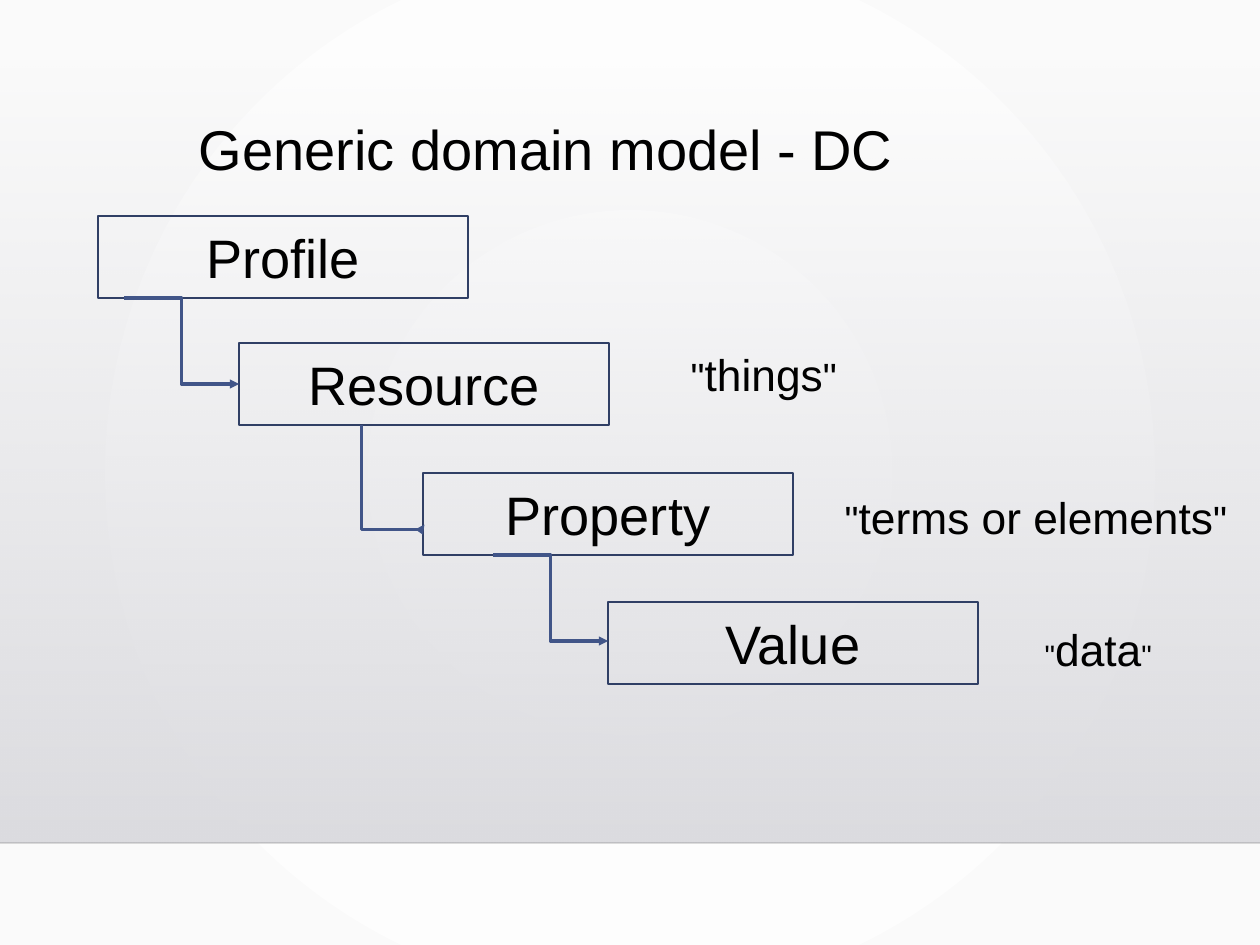
import dataclasses
import typing

import lxml.etree
import pptx
import pptx.dml.color
import pptx.enum.shapes
import pptx.enum.text
import pptx.oxml.ns
import pptx.util

PX = 10320
WIDTH, HEIGHT = 1260, 945
BOX_WIDTH, BOX_HEIGHT = 370, 82
FONT = "Arial"
BLACK, BOX_EDGE, ARROW = "000000", "303F65", "415588"
qn = pptx.oxml.ns.qn


@dataclasses.dataclass(frozen=True)
class Level:
    name: str
    left: int
    top: int


@dataclasses.dataclass(frozen=True)
class Link:
    begin: tuple[int, int]
    end: tuple[int, int]
    bend: int = 50000
    rotation: int = 0


@dataclasses.dataclass(frozen=True)
class Example:
    words: str
    left: int
    top: int
    width: int
    quote_size: int


LEVELS = [
    Level("Profile", 98, 216),
    Level("Resource", 239, 343),
    Level("Property", 423, 473),
    Level("Value", 608, 602),
]
LINKS = [
    Link((124, 298), (239, 384)),
    Link((443, 443), (343, 506), bend=105400, rotation=270),
    Link((493, 555), (608, 641)),
]
EXAMPLES = [
    Example("things", 682, 343, 166, 32),
    Example("terms or elements", 836, 486, 404, 32),
    Example("data", 1036, 618, 126, 24),
]


def px(*lengths: int) -> list[pptx.util.Emu]:
    return [pptx.util.Emu(length * PX) for length in lengths]


def colour(value: str) -> pptx.dml.color.RGBColor:
    return pptx.dml.color.RGBColor.from_string(value)


def format_run(run: typing.Any, size: float) -> None:
    run.font.size = pptx.util.Pt(size)
    run.font.name = FONT
    run.font.color.rgb = colour(BLACK)


def set_alpha(element: typing.Any, percent: int) -> None:
    tint = next(element.iter(qn("a:srgbClr")))
    lxml.etree.SubElement(tint, qn("a:alpha")).set("val", str(percent * 1000))


def set_gradient(fill: typing.Any, first: str, last: str) -> None:
    fill.gradient()
    for stop, value, position in zip(fill.gradient_stops, (first, last), (0, 1)):
        stop.color.rgb = colour(value)
        stop.position = position


def paint_background(slide: typing.Any) -> None:
    set_gradient(slide.background.fill, "FFFFFF", "FAFAFA")
    linear = next(slide.element.iter(qn("a:lin")))
    radial = lxml.etree.Element(qn("a:path"), {"path": "circle"})
    centre = dict.fromkeys("ltrb", "50000")
    lxml.etree.SubElement(radial, qn("a:fillToRect"), centre)
    linear.getparent().replace(linear, radial)


def add_line(slide: typing.Any, kind: typing.Any, begin: tuple[int, int],
             end: tuple[int, int], value: str, weight: float) -> typing.Any:
    line = slide.shapes.add_connector(kind, *px(*begin, *end))
    line.line.color.rgb = colour(value)
    line.line.width = pptx.util.Pt(weight)
    lxml.etree.SubElement(line.element.spPr, qn("a:effectLst"))
    return line


def add_backdrop(slide: typing.Any) -> None:
    shade = slide.shapes.add_shape(
        pptx.enum.shapes.MSO_SHAPE.RECTANGLE, *px(0, 65, WIDTH, 778))
    shade.shadow.inherit = False
    shade.line.fill.background()
    set_gradient(shade.fill, "DCDCE0", "DEDEE2")
    shade.fill.gradient_angle = 270
    set_alpha(shade.element, 0)
    floor = add_line(slide, pptx.enum.shapes.MSO_CONNECTOR.STRAIGHT,
                     (0, 843), (WIDTH, 843), "000001", 1)
    set_alpha(floor.element, 20)


def place_title(slide: typing.Any) -> None:
    title = slide.shapes.title
    title.left, title.top, title.width, title.height = px(190, 115, 905, 75)
    slide.shapes.element.append(title.element)
    frame = title.text_frame
    frame.text = "Generic domain model - DC"
    frame.auto_size = pptx.enum.text.MSO_AUTO_SIZE.NONE
    frame.vertical_anchor = pptx.enum.text.MSO_ANCHOR.MIDDLE
    heading = frame.paragraphs[0]
    heading.alignment = pptx.enum.text.PP_ALIGN.LEFT
    heading.line_spacing = 0.9
    format_run(heading.runs[0], 45.5)


def add_level(slide: typing.Any, level: Level) -> None:
    box = slide.shapes.add_shape(
        pptx.enum.shapes.MSO_SHAPE.RECTANGLE,
        *px(level.left, level.top, BOX_WIDTH, BOX_HEIGHT))
    box.shadow.inherit = False
    box.fill.background()
    box.line.color.rgb = colour(BOX_EDGE)
    box.line.width = pptx.util.Pt(2.25)
    box.text_frame.text = level.name
    box.text_frame.vertical_anchor = pptx.enum.text.MSO_ANCHOR.MIDDLE
    label = box.text_frame.paragraphs[0]
    label.alignment = pptx.enum.text.PP_ALIGN.CENTER
    format_run(label.runs[0], 44)


def add_link(slide: typing.Any, link: Link) -> None:
    arrow = add_line(slide, pptx.enum.shapes.MSO_CONNECTOR.ELBOW,
                     link.begin, link.end, ARROW, 2.5)
    outline = arrow.element.spPr.find(qn("a:ln"))
    lxml.etree.SubElement(outline, qn("a:tailEnd")).set("type", "triangle")
    guides = next(arrow.element.iter(qn("a:avLst")))
    lxml.etree.SubElement(
        guides, qn("a:gd"), {"name": "adj1", "fmla": f"val {link.bend}"})
    if link.rotation:
        arrow.element.spPr.find(qn("a:xfrm")).set("rot", str(link.rotation * 60000))


def add_example(slide: typing.Any, example: Example) -> None:
    note = slide.shapes.add_textbox(
        *px(example.left, example.top, example.width, 63))
    note.text_frame.word_wrap = False
    note.text_frame.auto_size = pptx.enum.text.MSO_AUTO_SIZE.SHAPE_TO_FIT_TEXT
    quote = ('"', example.quote_size)
    for text, size in (quote, (example.words, 36), quote):
        run = note.text_frame.paragraphs[0].add_run()
        run.text = text
        format_run(run, size)


def main() -> None:
    deck = pptx.Presentation()
    deck.slide_width, deck.slide_height = px(WIDTH, HEIGHT)
    slide = deck.slides.add_slide(deck.slide_layouts.get_by_name("Title Only"))
    paint_background(slide)
    add_backdrop(slide)
    place_title(slide)
    for level in LEVELS:
        add_level(slide, level)
    for link in LINKS:
        add_link(slide, link)
    for example in EXAMPLES:
        add_example(slide, example)
    deck.save("out.pptx")


if __name__ == "__main__":
    main()
